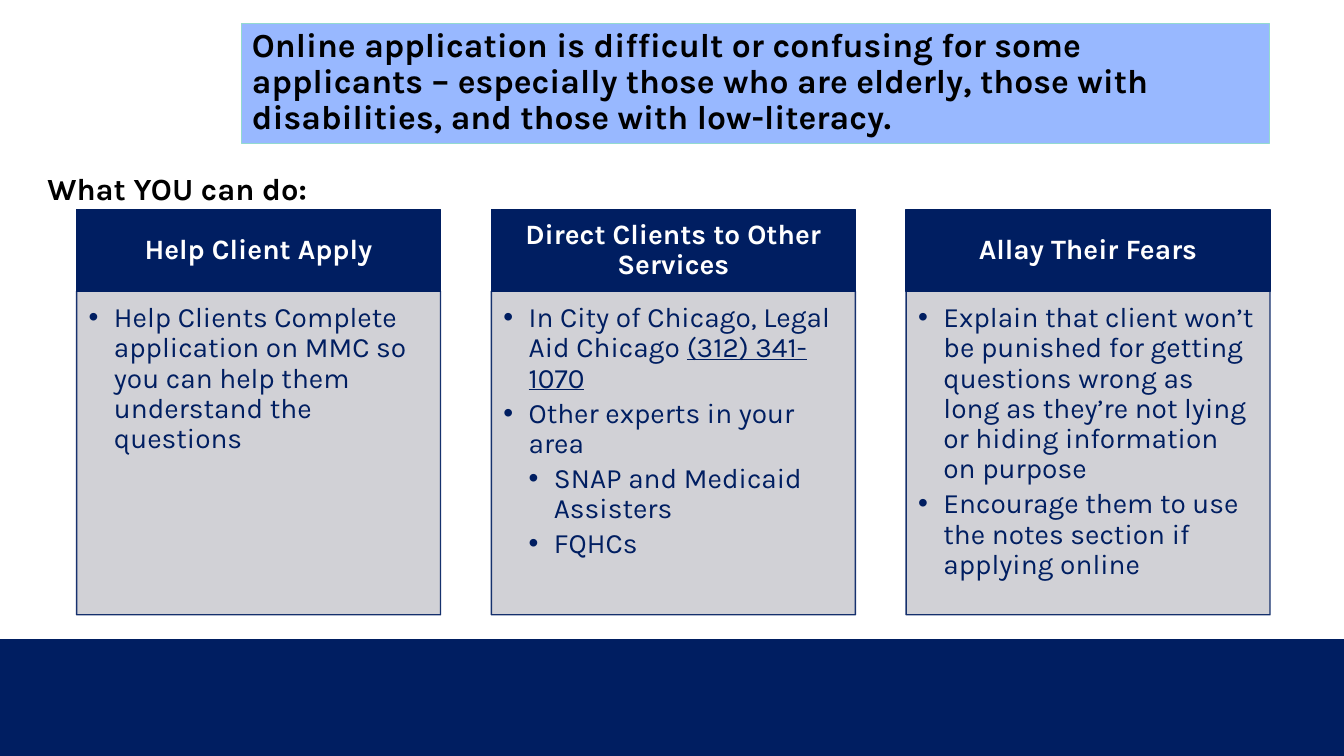
from dataclasses import dataclass

from lxml.etree import SubElement
from pptx import Presentation
from pptx.dml.color import RGBColor
from pptx.enum.shapes import MSO_SHAPE
from pptx.enum.text import MSO_ANCHOR, MSO_AUTO_SIZE, PP_ALIGN
from pptx.oxml.ns import qn
from pptx.util import Inches, Pt


@dataclass(frozen=True)
class Theme:
    font: str = "Karla"
    navy: str = "001E61"
    sky: str = "98B8FF"
    mint: str = "93DACF"
    grey: str = "CCCDD2"
    black: str = "000000"
    white: str = "FFFFFF"
    headline: float = 24
    prompt: float = 22
    card: float = 20


THEME = Theme()
WIDTH, HEIGHT = Inches(13.33), Inches(7.5)
COMPARISON_LAYOUT = 4

# Places are percentages of the slide's width and height.
HEADLINE_AREA = (18, 3.07, 76.45, 15.87)
PROMPT_AREA = (2.78, 22.2, 77.65, 5.33)
BAND_AREA = (0, 84.53, 100, 15.47)
CARD_LEFT, CARD_PITCH, CARD_WIDTH = 5.7, 30.86, 27.08
CARD_TOP, HEADER_HEIGHT, LIST_HEIGHT = 27.73, 10.8, 42.8

# A list item is its level, its plain text and its underlined ending.
CARDS = [
    ("Help Client Apply", [
        (0, "Help Clients Complete application on MMC so you can help them "
            "understand the questions", ""),
    ]),
    ("Direct Clients to Other Services", [
        (0, "In City of Chicago, Legal Aid Chicago ", "(312) 341-1070"),
        (0, "Other experts in your area", ""),
        (1, "SNAP and Medicaid Assisters", ""),
        (1, "FQHCs", ""),
    ]),
    ("Allay Their Fears", [
        (0, "Explain that client won’t be punished for getting questions wrong "
            "as long as they’re not lying or hiding information on purpose", ""),
        (0, "Encourage them to use the notes section if applying online", ""),
    ]),
]


def place(shape, area):
    left, top, width, height = area
    shape.left, shape.width = round(WIDTH * left / 100), round(WIDTH * width / 100)
    shape.top, shape.height = round(HEIGHT * top / 100), round(HEIGHT * height / 100)


def paint(shape, fill, line=None, weight=1, opacity=100):
    shape.fill.solid()
    shape.fill.fore_color.rgb = RGBColor.from_string(fill)
    if line:
        shape.line.color.rgb = RGBColor.from_string(line)
        shape.line.width = Pt(weight)
    else:
        shape.line.fill.background()
    if opacity < 100:
        for color in shape._element.spPr.iter(qn("a:srgbClr")):
            SubElement(color, qn("a:alpha"), val=str(opacity * 1000))


def add_rectangle(slide, area, fill, line=None):
    shape = slide.shapes.add_shape(MSO_SHAPE.RECTANGLE, 0, 0, 0, 0)
    shape.shadow.inherit = False
    place(shape, area)
    paint(shape, fill, line)
    return shape


def set_frame(shape, anchor=MSO_ANCHOR.TOP, insets=(0.1, 0.05, 0.1, 0.05)):
    frame = shape.text_frame
    frame.auto_size = MSO_AUTO_SIZE.NONE
    frame.word_wrap = True
    frame.vertical_anchor = anchor
    (frame.margin_left, frame.margin_top,
     frame.margin_right, frame.margin_bottom) = map(Inches, insets)
    return frame


def add_bullet(para, level):
    para.level = level
    properties = para._p.get_or_add_pPr()
    properties.set("marL", str(Inches(0.25 * (level + 1))))
    properties.set("indent", str(Inches(-0.25)))
    SubElement(properties, qn("a:buFont"), typeface="Arial")
    SubElement(properties, qn("a:buChar"), char="•")


def write(para, text, size, color, bold=False, underline=False,
          align=PP_ALIGN.LEFT, spacing=0.9, after=0):
    """Append a formatted span and set the paragraph's spacing."""
    para.alignment = align
    para.line_spacing = spacing
    para.space_before, para.space_after = Pt(0), Pt(after)
    span = para.add_run()
    span.text = text
    font = span.font
    font.name, font.size = THEME.font, Pt(size)
    font.bold, font.underline = bold, underline
    font.color.rgb = RGBColor.from_string(color)


def fill_headline(box, text):
    place(box, HEADLINE_AREA)
    paint(box, THEME.sky, THEME.mint, weight=0.75)
    write(set_frame(box).paragraphs[0], text, THEME.headline, THEME.black, bold=True)


def fill_prompt(box, text):
    place(box, PROMPT_AREA)
    frame = set_frame(box, MSO_ANCHOR.MIDDLE)
    write(frame.paragraphs[0], text, THEME.prompt, THEME.black, bold=True, spacing=1.0)


def add_card(slide, column, list_box, heading, items):
    left = CARD_LEFT + column * CARD_PITCH
    header = add_rectangle(slide, (left, CARD_TOP, CARD_WIDTH, HEADER_HEIGHT),
                           THEME.navy, THEME.navy)
    frame = set_frame(header, MSO_ANCHOR.MIDDLE, (0.16, 0.09, 0.16, 0.09))
    write(frame.paragraphs[0], heading, THEME.card, THEME.white,
          bold=True, align=PP_ALIGN.CENTER)

    place(list_box, (left, CARD_TOP + HEADER_HEIGHT, CARD_WIDTH, LIST_HEIGHT))
    paint(list_box, THEME.grey, THEME.navy, opacity=90)
    frame = set_frame(list_box, insets=(0.12, 0.12, 0.16, 0.17))
    for index, (level, text, underlined) in enumerate(items):
        para = frame.add_paragraph() if index else frame.paragraphs[0]
        add_bullet(para, level)
        write(para, text, THEME.card, THEME.navy, after=3.5)
        if underlined:
            write(para, underlined, THEME.card, THEME.navy, underline=True, after=3.5)


def main():
    deck = Presentation()
    deck.slide_width, deck.slide_height = WIDTH, HEIGHT
    slide = deck.slides.add_slide(deck.slide_layouts[COMPARISON_LAYOUT])
    headline, prompt, *list_boxes = slide.placeholders

    add_rectangle(slide, BAND_AREA, THEME.navy)
    fill_headline(headline, "Online application is difficult or confusing for some "
                            "applicants – especially those who are elderly, those with "
                            "disabilities, and those with low-literacy.")
    fill_prompt(prompt, "What YOU can do:")
    for column, (list_box, (heading, items)) in enumerate(zip(list_boxes, CARDS)):
        add_card(slide, column, list_box, heading, items)
    deck.save("out.pptx")


if __name__ == "__main__":
    main()
